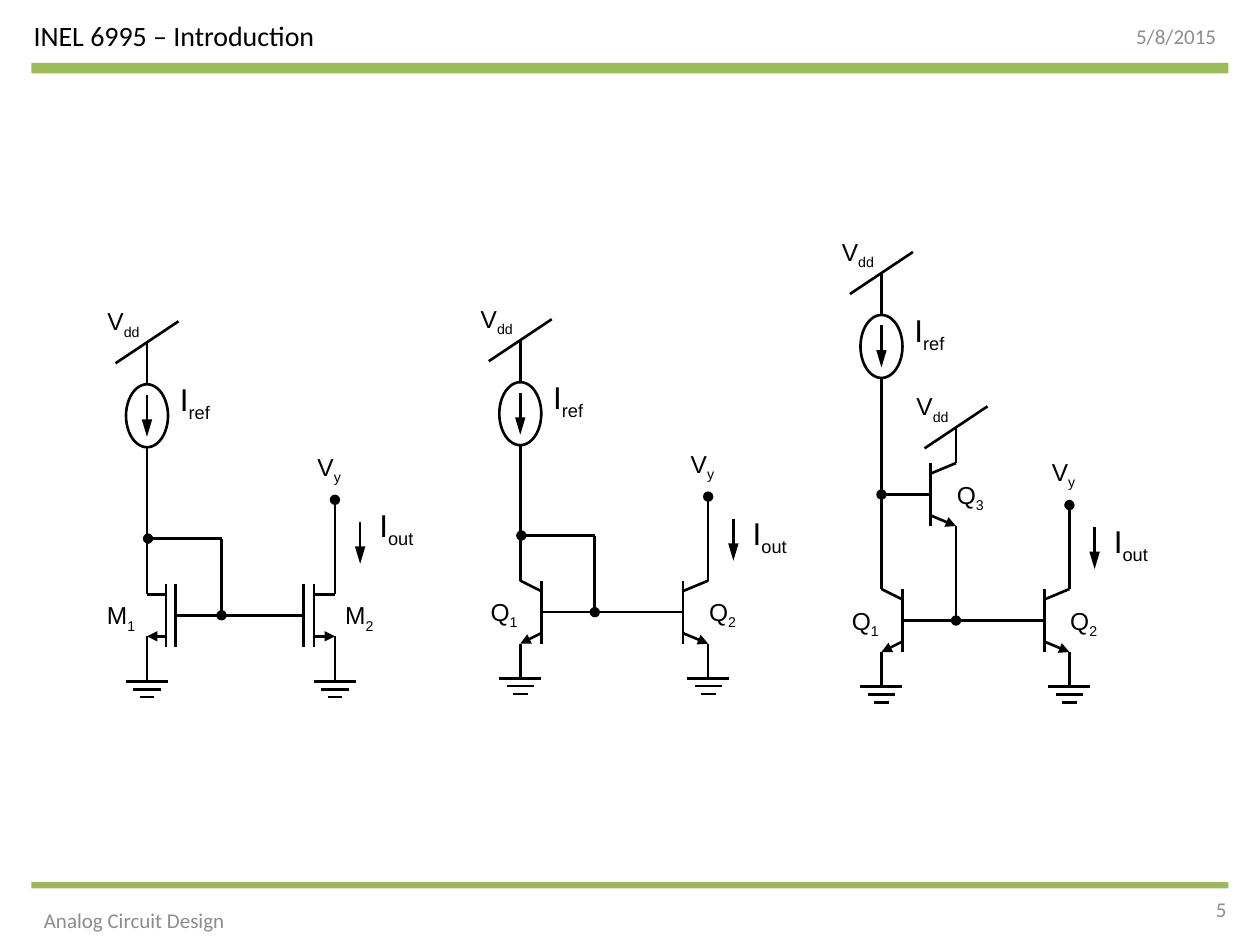
from lxml.etree import SubElement
from pptx import Presentation
from pptx.dml.color import RGBColor
from pptx.enum.shapes import MSO_CONNECTOR as CONN, MSO_SHAPE as SHAPE
from pptx.enum.text import MSO_ANCHOR as ANCHOR, MSO_AUTO_SIZE as AUTO, PP_ALIGN as ALIGN
from pptx.oxml.ns import qn
from pptx.util import Inches, Pt

COLS, ROWS = 120, 90  # slide grid; one cell is 1/12 inch
BLACK, GREEN, GRAY = "000000", "9BBB59", "8C8C8C"
LEG, NODE, BASE = 17.9, 7.1, 5  # output leg, middle node, base line
LABEL_WIDTHS = {"dd": 5.8, "ref": 5.6, "out": 6.1, "y": 4.8}


def rgb(color):
    return RGBColor.from_string(color)


class Schematic:
    """Draws on the grid, relative to the origin of the current circuit."""

    def __init__(self, prs):
        self.cell_w, self.cell_h = prs.slide_width / COLS, prs.slide_height / ROWS
        self.slide = prs.slides.add_slide(prs.slide_layouts[5])
        self.shapes, self.origin = self.slide.shapes, (0, 0)

    def start_circuit(self, x, y):
        """Open a group whose origin is the top of the input transistor."""
        self.shapes, self.origin = self.slide.shapes.add_group_shape().shapes, (x, y)

    def point(self, x, y):
        ox, oy = self.origin
        return round((ox + x) * self.cell_w), round((oy + y) * self.cell_h)

    def frame(self, x, y, w, h):
        return *self.point(x, y), round(w * self.cell_w), round(h * self.cell_h)

    def bar(self, y, h):
        s = self.shapes.add_shape(SHAPE.RECTANGLE, *self.frame(3, y, 114, h))
        s.shadow.inherit = False
        s.fill.solid()
        s.fill.fore_color.rgb = rgb(GREEN)
        s.line.fill.background()

    def set_text(self, s, text, size, color, align=ALIGN.LEFT):
        tf = s.text_frame
        tf.word_wrap, tf.vertical_anchor = True, ANCHOR.MIDDLE
        p = tf.paragraphs[0]
        p.text, p.alignment = text, align
        p.font.name, p.font.size, p.font.color.rgb = "Calibri", Pt(size), rgb(color)

    def title(self, text, *box):
        s = self.slide.shapes.title
        s.left, s.top, s.width, s.height = self.frame(*box)
        self.set_text(s, text, 16, BLACK)

    def note(self, text, *box, align=ALIGN.LEFT):
        self.set_text(self.shapes.add_textbox(*self.frame(*box)), text, 12, GRAY, align)

    def label(self, letter, sub, x, y, size=14):
        """Add a letter with a subscript."""
        box = self.frame(x, y, LABEL_WIDTHS.get(sub, 5.3), 4.8 if size > 14 else 4.1)
        tf = self.shapes.add_textbox(*box).text_frame
        tf.word_wrap, tf.auto_size = False, AUTO.SHAPE_TO_FIT_TEXT
        p = tf.paragraphs[0]
        p.font.name, p.font.size, p.font.color.rgb = "Arial", Pt(size), rgb(BLACK)
        for text in (letter, sub):
            r = p.add_run()
            r.text = text
        r.font._element.set("baseline", "-25000")

    def wire(self, x1, y1, x2, y2, end=None, length="med"):
        """Draw a line, with an optional 'triangle' or 'oval' at its second point."""
        s = self.shapes.add_connector(
            CONN.STRAIGHT, *self.point(x1, y1), *self.point(x2, y2))
        s.line.width, s.line.color.rgb = Pt(1.5), rgb(BLACK)
        if end:
            SubElement(s.line._get_or_add_ln(), qn("a:tailEnd"),
                       type=end, w="med", len=length)
        SubElement(s._element.spPr, qn("a:effectLst"))

    def current_arrow(self, x, y):
        self.wire(x, y, x, y + 4, "triangle", "lg")

    def ground(self, x, y):
        self.wire(x, y, x, y + 1.5)
        for drop, half in ((1.5, 2), (2.25, 1.3), (3, 0.7)):
            self.wire(x - half, y + drop, x + half, y + drop)

    def supply(self, x, y):
        self.wire(x, y, x, y + 2)
        self.wire(x + 3, y - 2, x - 3, y + 2)
        self.label("V", "dd", x - 4.95, y - 4)

    def source(self, x, y):
        """Draw the reference current source with its leads."""
        self.wire(x, y, x, y + 2)
        self.wire(x, y + 8, x, y + 10)
        s = self.shapes.add_shape(SHAPE.OVAL, *self.frame(x - 2, y + 2, 4, 6))
        s.shadow.inherit = False
        s.fill.background()
        s.line.width, s.line.color.rgb = Pt(1.5), rgb(BLACK)
        self.current_arrow(x, y + 3)
        self.label("I", "ref", x + 1.95, y + 1, 18)

    def output(self, label_drop):
        top = -6
        self.wire(LEG, 0, LEG, top, "oval")
        self.current_arrow(LEG + 2.4, top + 2.1)
        self.label("I", "out", LEG + 3.05, top + label_drop, 18)
        self.label("V", "y", LEG - 2.85, top - 5.15)

    def bipolar(self, sub, x, y, arm, label_x):
        """Draw an NPN; the sign of arm tells the side of its base."""
        base = x + arm
        self.wire(x, y, x, y + 2)
        self.wire(x, y + 8, x, y + 10)
        self.wire(x, y + 2, base, y + 3)
        self.wire(base, y + 7, x, y + 8, "triangle")
        self.wire(base, y + 2, base, y + 8)
        self.wire(base, y + 5, x + 2.5 * arm, y + 5)
        self.label("Q", sub, x + label_x, y + 3)

    def mosfet(self, sub, x, y, arm, label_x):
        """Draw an NMOS; the sign of arm tells the side of its gate."""
        channel, gate = x + arm, x + 1.5 * arm
        self.wire(x, y, x, y + 3)
        self.wire(x, y + 7, x, y + 10)
        self.wire(x, y + 3, channel, y + 3)
        self.wire(channel, y + 7, x, y + 7, "triangle")
        for plate in (channel, gate):
            self.wire(plate, y + 2, plate, y + 8)
        self.wire(gate, y + 5, x + 3 * arm, y + 5)
        self.label("M", sub, x + label_x, y + 3)

    def mirror(self, x, y, transistor, arms, label_xs, supply_y, label_drop):
        """Draw what every current mirror shares."""
        self.start_circuit(x, y)
        self.supply(0, supply_y)
        self.source(0, supply_y + 2)
        self.wire(0, supply_y + 12, 0, 0.1)
        for sub, leg, arm, label_x in zip("12", (0, LEG), arms, label_xs):
            transistor(sub, leg, 0, arm, label_x)
            self.ground(leg, 9.8)
        self.wire(3, BASE, 15, BASE)
        self.wire(NODE, -2.3, NODE, BASE, "oval")
        self.output(label_drop)

    def diode_link(self):
        self.wire(NODE, -2.3, 0.1, -2.3, "oval")

    def helper_link(self):
        """Feed the base line through a third transistor."""
        self.bipolar("3", NODE, -12, -2.4, -1.1)
        self.supply(NODE, -13.4)
        self.wire(3, -7, 0, -7, "oval")


def main():
    prs = Presentation()
    prs.slide_width, prs.slide_height = Inches(10), Inches(7.5)
    s = Schematic(prs)
    s.bar(6, 1)
    s.bar(84, 0.6)
    s.title("INEL 6995 – Introduction", 2, 1, 40, 4.8)
    s.note("5/8/2015", 89, 1, 28, 4.8, align=ALIGN.RIGHT)
    s.note("Analog Circuit Design", 3, 85.2, 21, 4.8)
    s.note("5", 90, 84.2, 28, 4.8, align=ALIGN.RIGHT)

    s.mirror(14, 53.6, s.mosfet, (1.8, -2), (-5, -0.2), -21, 0)
    s.diode_link()
    npn = dict(transistor=s.bipolar, arms=(2, -2.4), label_xs=(-4, -1.1))
    s.mirror(49.55, 53.3, **npn, supply_y=-20.9, label_drop=1.1)
    s.diode_link()
    s.mirror(83.95, 54.1, **npn, supply_y=-28.1, label_drop=1)
    s.helper_link()
    prs.save("out.pptx")


if __name__ == "__main__":
    main()
